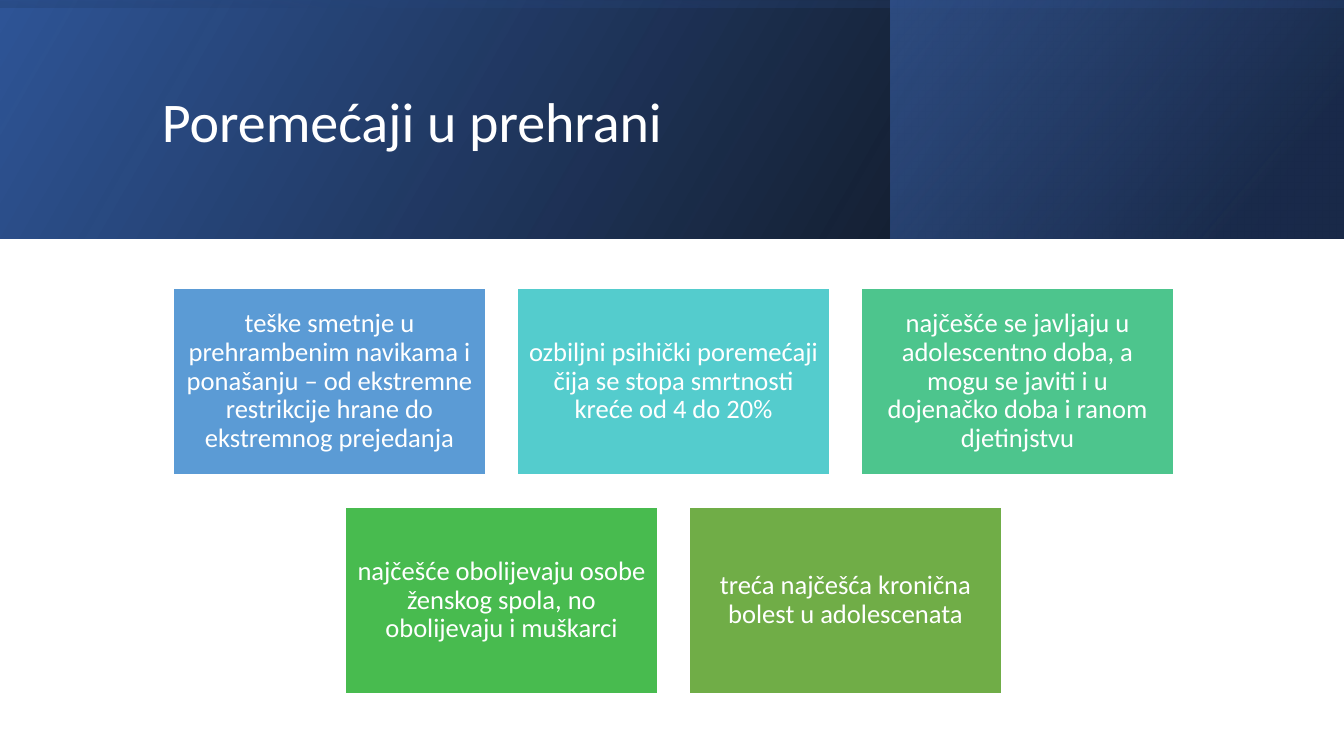
from dataclasses import dataclass

from lxml.etree import SubElement
from pptx import Presentation
from pptx.dml.color import RGBColor
from pptx.enum.shapes import MSO_SHAPE
from pptx.enum.text import MSO_ANCHOR, PP_ALIGN
from pptx.oxml.ns import qn
from pptx.util import Emu, Pt


@dataclass(frozen=True)
class Theme:
    font: str = "Calibri"
    title_size: int = 40
    card_size: int = 19
    white: str = "FFFFFF"
    black: str = "000000"
    blue: str = "2F5597"
    navy: str = "203864"
    bright_blue: str = "4472C4"
    cards: tuple = ("5B9BD5", "54CCCD", "4DC58D", "48BB4F", "70AD47")


THEME = Theme()
SLIDE_W, SLIDE_H = 1344, 756
BAND_H = 239
CARD_W, CARD_H = 313, 187
CARD_STEP_X, CARD_STEP_Y = 344, 219
CARDS_CENTER, CARDS_TOP = 673, 288

CARD_ROWS = (
    (
        "teške smetnje u prehrambenim navikama i ponašanju – od ekstremne "
        "restrikcije hrane do ekstremnog prejedanja",
        "ozbiljni psihički poremećaji čija se stopa smrtnosti kreće od 4 do 20%",
        "najčešće se javljaju u adolescentno doba, a mogu se javiti i u "
        "dojenačko doba i ranom djetinjstvu",
    ),
    (
        "najčešće obolijevaju osobe ženskog spola, no obolijevaju i muškarci",
        "treća najčešća kronična bolest u adolescenata",
    ),
)


def px(n):
    return Emu(round(n * 914400 / 100.8))


def add_rect(s, x, y, w, h):
    sp = s.shapes.add_shape(MSO_SHAPE.RECTANGLE, px(x), px(y), px(w), px(h))
    sp.shadow.inherit = False
    return sp


def add_gradient_rect(s, box, stops, angle, rotation=0):
    """Add a mirrored rectangle; stops are (position %, colour, opacity %)."""
    sp = add_rect(s, *box)
    sp.rotation = rotation
    sp.line.fill.background()
    sp.fill.gradient()
    spPr = sp._element.spPr
    spPr.find(qn("a:xfrm")).set("flipH", "1")
    grad = spPr.find(qn("a:gradFill"))
    for child in list(grad):
        grad.remove(child)
    stop_list = SubElement(grad, qn("a:gsLst"))
    for position, color, opacity in stops:
        stop = SubElement(stop_list, qn("a:gs"), pos=str(position * 1000))
        clr = SubElement(stop, qn("a:srgbClr"), val=color)
        SubElement(clr, qn("a:alpha"), val=str(opacity * 1000))
    SubElement(grad, qn("a:lin"), ang=str(angle * 60000), scaled="0")


def write_text(sp, text, size, align):
    tf = sp.text_frame
    tf.word_wrap = True
    tf.vertical_anchor = MSO_ANCHOR.MIDDLE
    p = tf.paragraphs[0]
    p.alignment = align
    p.line_spacing = 0.9
    r = p.add_run()
    r.text = text
    r.font.name = THEME.font
    r.font.size = Pt(size)
    r.font.color.rgb = RGBColor.from_string(THEME.white)
    return tf


def add_header(s):
    t = THEME
    add_gradient_rect(s, (0, 0, SLIDE_W, BAND_H),
                      [(0, t.black, 96), (100, t.blue, 100)], 330)
    add_gradient_rect(s, (891, 0, 452, BAND_H),
                      [(19, t.navy, 68), (100, t.bright_blue, 48)], 320)
    offset = (SLIDE_W - BAND_H) // 2
    add_gradient_rect(s, (offset, -offset, BAND_H, SLIDE_W),
                      [(23, t.blue, 16), (99, t.black, 45)], 350, rotation=270)


def add_title(s, text):
    sp = s.shapes.add_textbox(px(152), px(38), px(1072), px(173))
    write_text(sp, text, THEME.title_size, PP_ALIGN.LEFT)


def add_card(s, x, y, text, color):
    sp = add_rect(s, x, y, CARD_W, CARD_H)
    sp.fill.solid()
    sp.fill.fore_color.rgb = RGBColor.from_string(color)
    sp.line.color.rgb = RGBColor.from_string(THEME.white)
    sp.line.width = Pt(1)
    tf = write_text(sp, text, THEME.card_size, PP_ALIGN.CENTER)
    tf.margin_left = tf.margin_right = tf.margin_top = tf.margin_bottom = px(8)


def add_cards(s):
    """Lay out the cards in rows centred on a common axis."""
    colors = iter(THEME.cards)
    for row, texts in enumerate(CARD_ROWS):
        row_w = (len(texts) - 1) * CARD_STEP_X + CARD_W
        left = CARDS_CENTER - row_w // 2
        for col, text in enumerate(texts):
            add_card(s, left + col * CARD_STEP_X, CARDS_TOP + row * CARD_STEP_Y,
                     text, next(colors))


def main():
    prs = Presentation()
    prs.slide_width, prs.slide_height = px(SLIDE_W), px(SLIDE_H)
    s = prs.slides.add_slide(prs.slide_layouts[6])
    add_header(s)
    add_title(s, "Poremećaji u prehrani")
    add_cards(s)
    prs.save("out.pptx")


if __name__ == "__main__":
    main()
